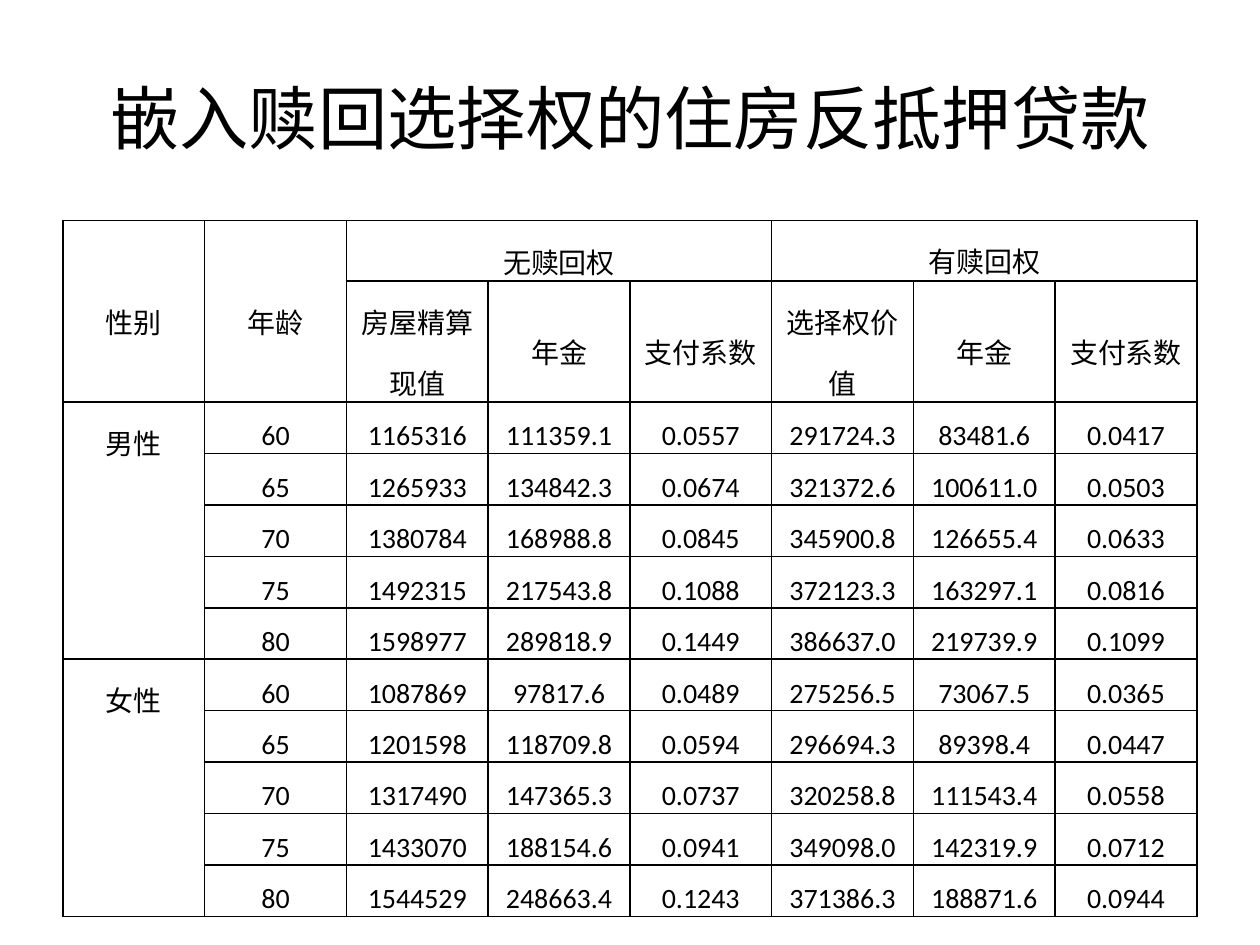
import pptx
import pptx.dml.color
import pptx.enum.text
import pptx.oxml
import pptx.oxml.ns
import pptx.util

Pt = pptx.util.Pt
ALIGN = pptx.enum.text.PP_ALIGN
ANCHOR = pptx.enum.text.MSO_ANCHOR

TITLE = "嵌入赎回选择权的住房反抵押贷款"
HEADERS = [
    ["性别", "年龄", "无赎回权", "", "", "有赎回权", "", ""],
    ["", "", "房屋精算现值", "年金", "支付系数", "选择权价值", "年金", "支付系数"],
]
GROUPS = {
    "男性": [
        ["60", "1165316", "111359.1", "0.0557", "291724.3", "83481.6", "0.0417"],
        ["65", "1265933", "134842.3", "0.0674", "321372.6", "100611.0", "0.0503"],
        ["70", "1380784", "168988.8", "0.0845", "345900.8", "126655.4", "0.0633"],
        ["75", "1492315", "217543.8", "0.1088", "372123.3", "163297.1", "0.0816"],
        ["80", "1598977", "289818.9", "0.1449", "386637.0", "219739.9", "0.1099"],
    ],
    "女性": [
        ["60", "1087869", "97817.6", "0.0489", "275256.5", "73067.5", "0.0365"],
        ["65", "1201598", "118709.8", "0.0594", "296694.3", "89398.4", "0.0447"],
        ["70", "1317490", "147365.3", "0.0737", "320258.8", "111543.4", "0.0558"],
        ["75", "1433070", "188154.6", "0.0941", "349098.0", "142319.9", "0.0712"],
        ["80", "1544529", "248663.4", "0.1243", "371386.3", "188871.6", "0.0944"],
    ],
}
OPTION_COLUMN = 5  # first column of the "有赎回权" half


def color(hex_string):
    return pptx.dml.color.RGBColor.from_string(hex_string)


class SlideBuilder:
    font = "Calibri"
    ink = "000000"
    cell_size = 16
    border_width = 1

    def __init__(self, page):
        self.page = page

    def format_text(self, frame, size):
        for para in frame.paragraphs:
            para.alignment = ALIGN.CENTER
            for span in para.runs:
                span.font.name = self.font
                span.font.size = Pt(size)
                span.font.color.rgb = color(self.ink)

    def title(self, text, left, top, width, height, size):
        box = self.page.shapes.title
        box.left, box.top, box.width, box.height = map(Pt, (left, top, width, height))
        frame = box.text_frame
        frame.text = text
        frame.auto_size = pptx.enum.text.MSO_AUTO_SIZE.NONE
        frame.vertical_anchor = ANCHOR.MIDDLE
        self.format_text(frame, size)

    def borders(self, cell):
        properties = cell._tc.get_or_add_tcPr()
        for index, side in enumerate(("lnL", "lnR", "lnT", "lnB")):
            line = pptx.oxml.parse_xml(
                f'<a:{side} {pptx.oxml.ns.nsdecls("a")} w="{Pt(self.border_width)}">'
                f'<a:solidFill><a:srgbClr val="{self.ink}"/></a:solidFill></a:{side}>'
            )
            properties.insert(index, line)

    def cell(self, cell, text, anchor):
        cell.text = text
        cell.margin_left = cell.margin_right = Pt(5)
        cell.margin_top = cell.margin_bottom = 0
        cell.vertical_anchor = anchor
        cell.fill.background()
        self.borders(cell)
        cell.text_frame.paragraphs[0].line_spacing = 1.5
        self.format_text(cell.text_frame, self.cell_size)

    def table(self, rows, left, top, width, height, row_height, top_anchored):
        """Fill a grid; top_anchored(row, column) picks the cells not centred vertically."""
        holder = self.page.shapes.add_table(
            len(rows), len(rows[0]), Pt(left), Pt(top), Pt(width), Pt(height)
        )
        table = holder.table
        table.first_row = table.horz_banding = False
        for row, texts in enumerate(rows):
            table.rows[row].height = Pt(row_height)
            for column, text in enumerate(texts):
                anchor = ANCHOR.TOP if top_anchored(row, column) else ANCHOR.MIDDLE
                self.cell(table.cell(row, column), text, anchor)
        holder.height = Pt(height)
        return table

    def merge(self, table, row, column, row_count, column_count):
        last = table.cell(row + row_count - 1, column + column_count - 1)
        table.cell(row, column).merge(last)


def is_top_anchored(row, column):
    if row == 1:
        return False
    return column >= OPTION_COLUMN or (row >= len(HEADERS) and column == 0)


def main():
    deck = pptx.Presentation()
    deck.slide_width, deck.slide_height = Pt(720), Pt(540)
    builder = SlideBuilder(deck.slides.add_slide(deck.slide_layouts[5]))
    builder.title(TITLE, 36, 21.6, 648, 90, 39.6)

    rows = list(HEADERS)
    for gender, records in GROUPS.items():
        for index, record in enumerate(records):
            rows.append([gender if index == 0 else "", *record])
    table = builder.table(rows, 36, 126, 648, 378.7, 29.4, is_top_anchored)

    for column in (0, 1):
        builder.merge(table, 0, column, 2, 1)
    for column in (2, OPTION_COLUMN):
        builder.merge(table, 0, column, 1, 3)
    row = len(HEADERS)
    for records in GROUPS.values():
        builder.merge(table, row, 0, len(records), 1)
        table.cell(row, 0)._tc.get_or_add_tcPr().set("vert", "eaVert")
        row += len(records)

    deck.save("out.pptx")


if __name__ == "__main__":
    main()
